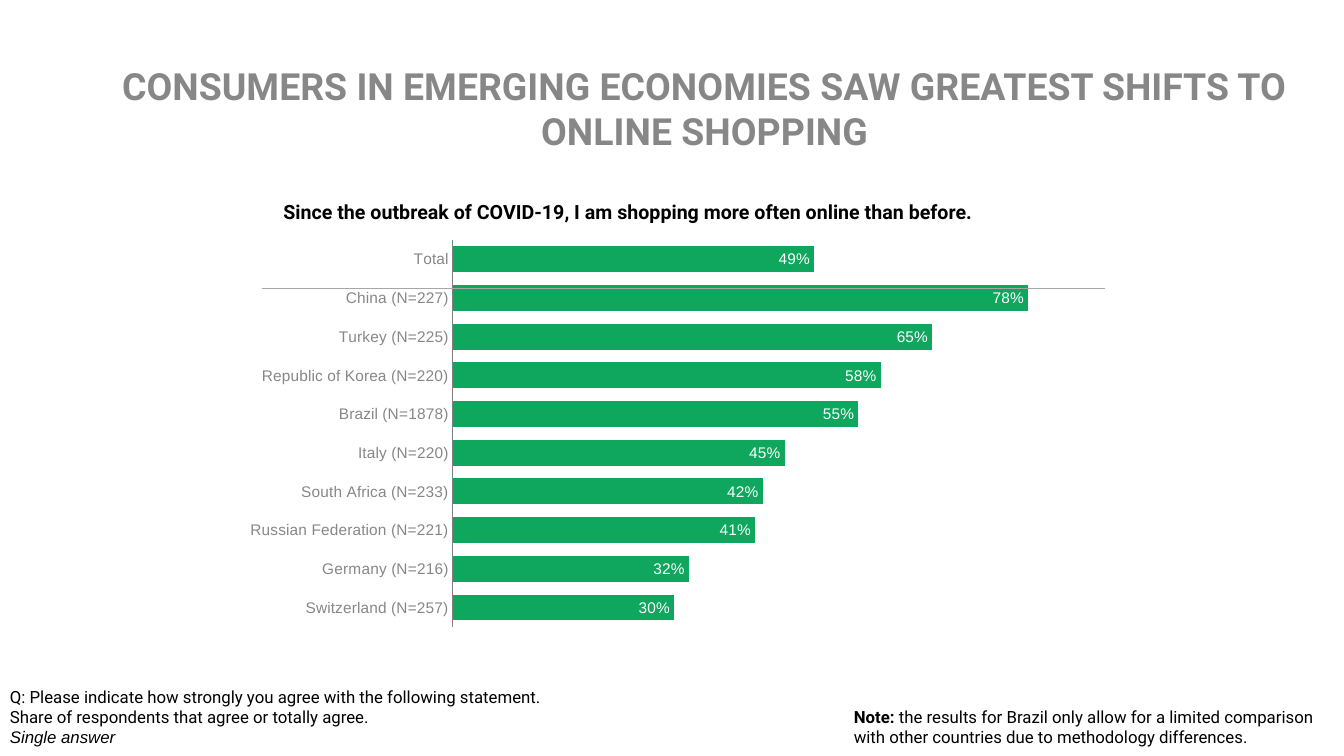
from dataclasses import dataclass

from lxml.etree import SubElement, fromstring
from pptx import Presentation
from pptx.chart.data import CategoryChartData
from pptx.dml.color import RGBColor
from pptx.enum.chart import XL_CHART_TYPE, XL_LABEL_POSITION, XL_TICK_MARK
from pptx.enum.shapes import MSO_CONNECTOR
from pptx.enum.text import PP_ALIGN
from pptx.oxml.ns import qn
from pptx.util import Inches, Pt


@dataclass(frozen=True)
class Theme:
    """Colours, fonts and type sizes of the slide."""
    black: RGBColor = RGBColor.from_string("000000")
    white: RGBColor = RGBColor.from_string("FFFFFF")
    grey: RGBColor = RGBColor.from_string("878787")
    axis: RGBColor = RGBColor.from_string("808080")
    divider: RGBColor = RGBColor.from_string("A6A6A6")
    bar: RGBColor = RGBColor.from_string("0FA75E")
    heading_font: str = "Roboto"
    chart_font: str = "Arial"
    title_size: float = 26.7
    question_size: float = 14
    note_size: float = 12
    chart_size: float = 11


THEME = Theme()
SLIDE_WIDTH, SLIDE_HEIGHT = 13.33, 7.5
SHARES = {
    "Total": 0.49,
    "China (N=227)": 0.78,
    "Turkey (N=225)": 0.65,
    "Republic of Korea (N=220)": 0.58,
    "Brazil (N=1878)": 0.55,
    "Italy (N=220)": 0.45,
    "South Africa (N=233)": 0.42,
    "Russian Federation (N=221)": 0.41,
    "Germany (N=216)": 0.32,
    "Switzerland (N=257)": 0.30,
}
PLOT_LAYOUT = {"x": 0.245, "y": 0.02, "w": 0.74, "h": 0.96}


def style_font(font, size, color, name=THEME.heading_font, bold=None):
    """Set the look of a font."""
    font.name, font.size, font.bold = name, Pt(size), bold
    font.color.rgb = color


def add_text(slide, box, paragraphs, size, color=THEME.black, bold=None,
             align=PP_ALIGN.LEFT, inset=None):
    """Place a wrapping text box and return its paragraphs; each is a list of runs."""
    frame = slide.shapes.add_textbox(*map(Inches, box)).text_frame
    frame.word_wrap = True
    if inset:
        frame.margin_left = frame.margin_right = Inches(inset)
        frame.margin_top = frame.margin_bottom = Inches(inset)
    for index, runs in enumerate(paragraphs):
        paragraph = frame.add_paragraph() if index else frame.paragraphs[0]
        paragraph.alignment = align
        for text in runs:
            paragraph.add_run().text = text
        style_font(paragraph.font, size, color, bold=bold)
    return frame.paragraphs


def add_headings(slide, title_box, question_box):
    """Place the slide title and the statement above the chart."""
    add_text(slide, title_box,
             [["CONSUMERS IN EMERGING ECONOMIES SAW GREATEST SHIFTS TO ONLINE SHOPPING"]],
             THEME.title_size, THEME.grey, True, PP_ALIGN.CENTER, 0.13)
    add_text(slide, question_box,
             [["Since the outbreak of COVID-19, I am shopping more often online than before."]],
             THEME.question_size, bold=True, align=PP_ALIGN.CENTER)


def add_footnotes(slide, question_box, note_box):
    """Place the survey question and the note on comparability."""
    paragraphs = add_text(slide, question_box, [
        ["Q: Please indicate how strongly you agree with the following statement. "
         "Share of respondents that agree or totally agree."],
        ["Single answer"],
    ], THEME.note_size)
    paragraphs[1].font.name = THEME.chart_font
    paragraphs[1].font.italic = True
    note = add_text(slide, note_box, [[
        "Note: ",
        "the results for Brazil only allow for a limited comparison with other "
        "countries due to methodology differences.",
    ]], THEME.note_size)[0]
    note.runs[0].font.bold = True


def fix_plot_area(chart):
    """Hold the inner plot area at fixed shares of the chart."""
    plot_area = chart.element.find(".//" + qn("c:plotArea"))
    for layout in plot_area.findall(qn("c:layout")):
        plot_area.remove(layout)
    layout = fromstring(
        '<c:layout xmlns:c="http://schemas.openxmlformats.org/drawingml/2006/chart"/>')
    manual = SubElement(layout, qn("c:manualLayout"))
    settings = {"layoutTarget": "inner", "xMode": "edge", "yMode": "edge", **PLOT_LAYOUT}
    for name, value in settings.items():
        SubElement(manual, qn("c:" + name)).set("val", str(value))
    plot_area.insert(0, layout)


def add_share_chart(slide, box):
    """Place the bar chart of shares by country, first country on top."""
    data = CategoryChartData(number_format="0%")
    data.categories = list(reversed(SHARES))
    data.add_series("Series 1", list(reversed(SHARES.values())))
    chart = slide.shapes.add_chart(
        XL_CHART_TYPE.BAR_CLUSTERED, *map(Inches, box), data).chart
    chart.has_legend = chart.has_title = False
    style_font(chart.font, 10, THEME.black, THEME.chart_font)

    countries = chart.category_axis
    countries.major_tick_mark = countries.minor_tick_mark = XL_TICK_MARK.NONE
    countries.has_major_gridlines = False
    countries.format.line.color.rgb = THEME.axis
    countries.format.line.width = Pt(0.75)
    style_font(countries.tick_labels.font, THEME.chart_size, THEME.grey, THEME.chart_font)

    scale = chart.value_axis
    scale.minimum_scale, scale.maximum_scale = 0, 0.9
    scale.has_major_gridlines = scale.visible = False

    plot = chart.plots[0]
    plot.gap_width = 50
    plot.vary_by_categories = False
    series = plot.series[0]
    series.invert_if_negative = False
    series.format.fill.solid()
    series.format.fill.fore_color.rgb = THEME.bar
    labels = series.data_labels
    labels.show_value = True
    labels.position = XL_LABEL_POSITION.INSIDE_END
    labels.number_format, labels.number_format_is_linked = "0%", False
    style_font(labels.font, THEME.chart_size, THEME.white, THEME.chart_font)
    fix_plot_area(chart)


def add_divider(slide, left, right, top):
    """Draw the line that sets the total apart from the countries."""
    line = slide.shapes.add_connector(
        MSO_CONNECTOR.STRAIGHT, *map(Inches, (left, top, right, top)))
    line.line.color.rgb = THEME.divider
    line.line.width = Pt(1)
    SubElement(line.element.spPr, qn("a:effectLst"))


def build_slide(presentation):
    """Build the survey slide."""
    slide = presentation.slides.add_slide(presentation.slide_layouts[6])
    chart_left, chart_top, chart_width, chart_height = 2.31, 2.3, 8.9, 4
    add_share_chart(slide, (chart_left, chart_top, chart_width, chart_height))
    add_footnotes(slide, (0, SLIDE_HEIGHT - 0.74, 5.76, 0.71),
                  (8.37, SLIDE_HEIGHT - 0.54, SLIDE_WIDTH - 8.37, 0.5))
    add_headings(slide, (0.99, 0.5, 12, 1.07), (1.91, chart_top - 0.37, 8.64, 0.34))
    add_divider(slide, chart_left + 0.29, chart_left + chart_width - 0.25, chart_top + 0.56)


def main():
    """Create and save the presentation."""
    presentation = Presentation()
    presentation.slide_width = Inches(SLIDE_WIDTH)
    presentation.slide_height = Inches(SLIDE_HEIGHT)
    build_slide(presentation)
    presentation.save("out.pptx")


if __name__ == "__main__":
    main()
